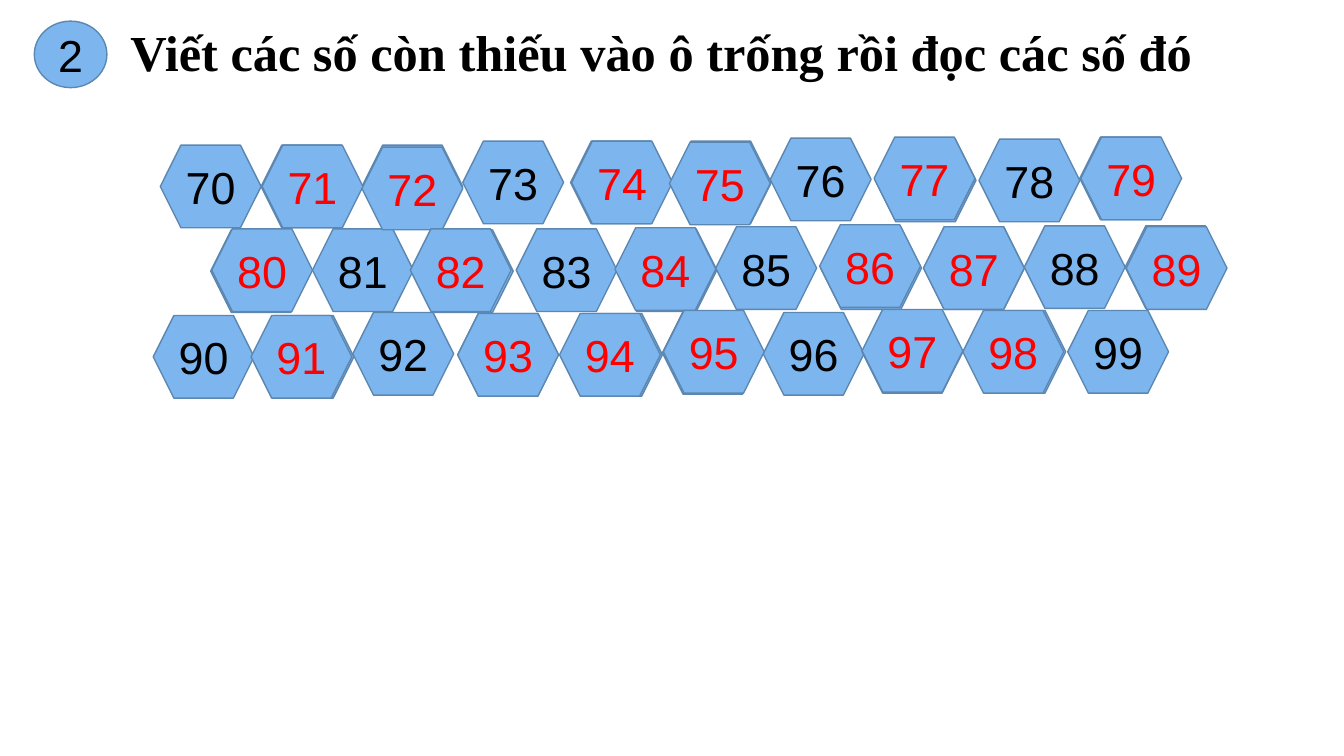
from pptx import Presentation
from pptx import util as u
from pptx.dml.color import RGBColor
from pptx.enum import shapes, text

PX = 9144
HEX_W, HEX_H = 100, 82
COLORS = {"cell": "7DB6EF", "edge": "5C87B1", "given": "000000", "answer": "FF0000"}

ROWS = {
    70: [(159, 144), (259, 144), (359, 144), (459, 140), (566, 140),
         (665, 140), (764, 137), (868, 138), (971, 138), (1071, 136)],
    80: [(209, 228), (310, 227), (409, 228), (512, 227), (611, 227),
         (710, 225), (814, 225), (916, 225), (1016, 224), (1116, 224)],
    90: [(152, 313), (251, 313), (350, 310), (454, 311), (557, 311),
         (657, 309), (757, 310), (855, 308), (957, 308), (1059, 308)],
}
ANSWERS = {
    71: (260, 144), 72: (359, 146), 74: (567, 140), 75: (664, 141),
    77: (867, 136), 79: (1072, 136),
    80: (210, 227), 82: (407, 227), 84: (610, 226), 86: (813, 223),
    87: (916, 225), 89: (1117, 225),
    91: (249, 313), 93: (454, 311), 94: (555, 311), 95: (658, 308),
    97: (855, 307), 98: (955, 308),
}


class Worksheet:
    def __init__(self, prs):
        self.slide = prs.slides.add_slide(prs.slide_layouts[5])

    def color(self, name):
        return RGBColor.from_string(COLORS[name])

    def label(self, shape, words, size, font, color, bold=False):
        frame = shape.text_frame
        frame.text = words
        paragraph = frame.paragraphs[0]
        paragraph.alignment = text.PP_ALIGN.CENTER
        for run in paragraph.runs:
            run.font.size = u.Pt(size)
            run.font.name = font
            run.font.bold = bold
            run.font.color.rgb = self.color(color)

    def title(self, words, left, top, width, height):
        heading = self.slide.shapes.title
        heading.left, heading.top = left * PX, top * PX
        heading.width, heading.height = width * PX, height * PX
        self.label(heading, words, 36, "Times New Roman", "given", True)
        heading.text_frame.vertical_anchor = text.MSO_ANCHOR.TOP
        heading.text_frame.auto_size = text.MSO_AUTO_SIZE.SHAPE_TO_FIT_TEXT

    def cell(self, parent, kind, left, top, width, height, number="", color="given"):
        cell = parent.shapes.add_shape(kind, left * PX, top * PX, width * PX, height * PX)
        cell.shadow.inherit = False
        cell.fill.solid()
        cell.fill.fore_color.rgb = self.color("cell")
        cell.line.color.rgb = self.color("edge")
        cell.line.width = u.Pt(1)
        if number:
            self.label(cell, str(number), 32, "Arial", color)
            frame = cell.text_frame
            frame.word_wrap = False
            frame.vertical_anchor = text.MSO_ANCHOR.MIDDLE
            frame.margin_top = frame.margin_bottom = 0

    def hexagon(self, parent, place, number="", color="given"):
        self.cell(parent, shapes.MSO_SHAPE.HEXAGON, *place, HEX_W, HEX_H, number, color)

    def row(self, first, places):
        group = self.slide.shapes.add_group_shape()
        for number, place in enumerate(places, first):
            self.hexagon(group, place, "" if number in ANSWERS else number)


def main():
    prs = Presentation()
    prs.slide_width, prs.slide_height = 1333 * PX, 750 * PX
    sheet = Worksheet(prs)
    sheet.cell(sheet.slide, shapes.MSO_SHAPE.OVAL, 34, 21, 72, 66, 2)
    sheet.title("Viết các số còn thiếu vào ô trống rồi đọc các số đó", 84, 16, 1144, 71)
    for first, places in ROWS.items():
        sheet.row(first, places)
    for number, place in ANSWERS.items():
        sheet.hexagon(sheet.slide, place, number, "answer")
    prs.save("out.pptx")


if __name__ == "__main__":
    main()
